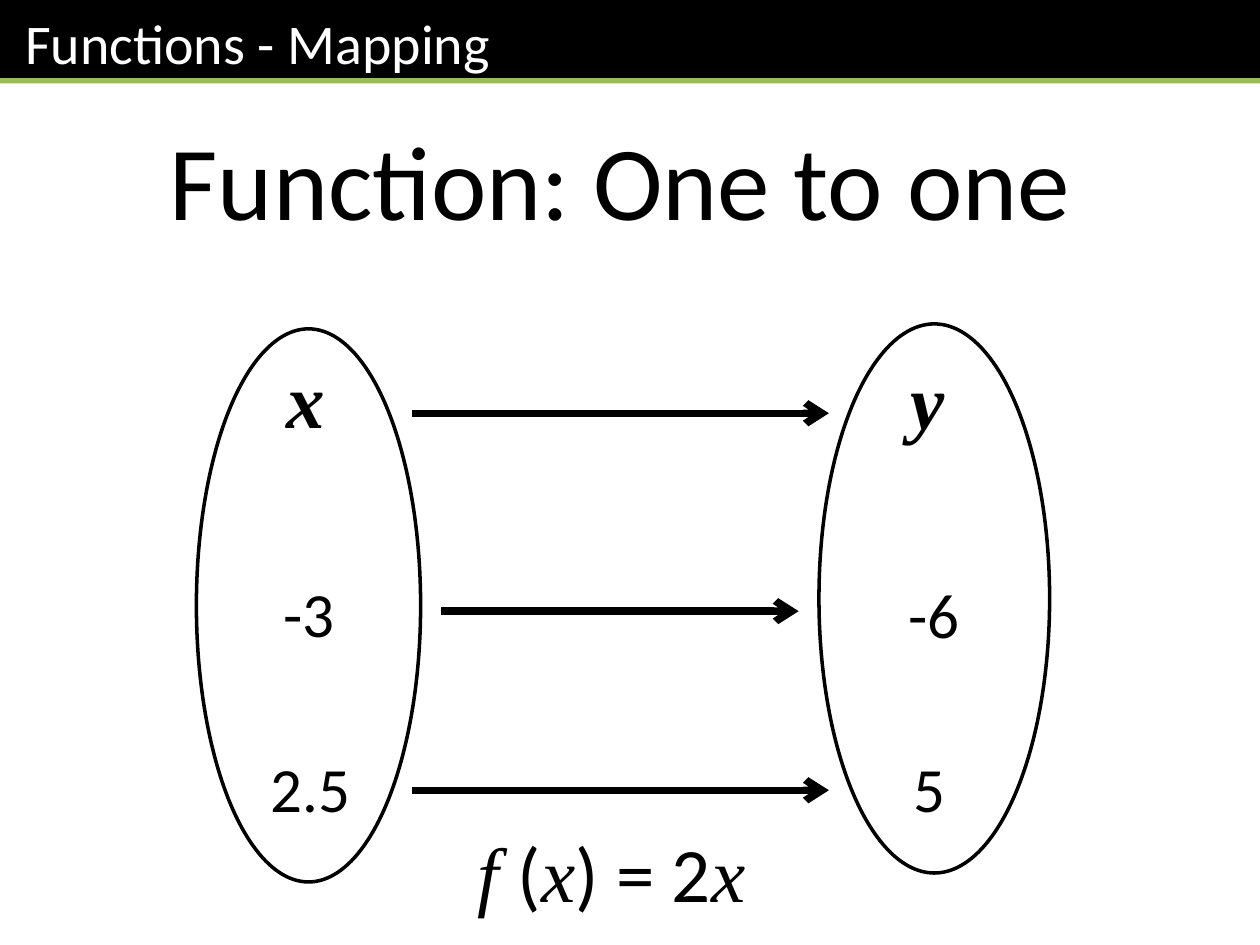
from dataclasses import dataclass

from lxml import etree
from pptx import Presentation
from pptx import util as u
from pptx.dml.color import RGBColor
from pptx.enum import shapes, text
from pptx.oxml import ns


@dataclass(frozen=True)
class Theme:
    black: RGBColor = RGBColor(0x00, 0x00, 0x00)
    white: RGBColor = RGBColor(0xFF, 0xFF, 0xFF)
    green: RGBColor = RGBColor(0x9B, 0xBB, 0x59)
    sans: str = "Calibri"
    serif: str = "Times New Roman"
    header: int = 32
    value: int = 36
    symbol: int = 44
    title: int = 60


theme = Theme()


def write(box, runs, size, color=theme.black, align=text.PP_ALIGN.CENTER):
    """Fill the box with one paragraph; runs are (words, font, bold, italic)."""
    para = box.text_frame.paragraphs[0]
    para.alignment = align
    for words, font, bold, italic in runs:
        span = para.add_run()
        span.text = words
        span.font.name = font
        span.font.size = u.Pt(size)
        span.font.bold = bold
        span.font.italic = italic
        span.font.color.rgb = color


def add_line(left, right, y, color, width):
    line = page.shapes.add_connector(
        shapes.MSO_CONNECTOR.STRAIGHT, u.Cm(left), u.Cm(y), u.Cm(right), u.Cm(y))
    line.line.color.rgb = color
    line.line.width = u.Pt(width)
    etree.SubElement(line._element.spPr, ns.qn("a:effectLst"))
    return line


deck = Presentation()
deck.slide_width, deck.slide_height = u.Cm(25.4), u.Cm(19.05)
page = deck.slides.add_slide(deck.slide_layouts[6])

# Header bar
header = page.shapes.add_shape(
    shapes.MSO_SHAPE.RECTANGLE, 0, 0, deck.slide_width, u.Cm(1.68))
header.shadow.inherit = False
header.fill.solid()
header.fill.fore_color.rgb = theme.black
header.line.fill.background()
write(header, [(" Functions - Mapping", theme.sans, False, False)],
      theme.header, theme.white, text.PP_ALIGN.LEFT)
add_line(0, 25.4, 1.63, theme.green, 3)

# Domain and range ovals
for left, top, width, height in [(3.96, 6.63, 4.52, 11.15), (16.51, 6.53, 4.65, 11.07)]:
    oval = page.shapes.add_shape(
        shapes.MSO_SHAPE.OVAL, u.Cm(left), u.Cm(top), u.Cm(width), u.Cm(height))
    oval.shadow.inherit = False
    oval.fill.solid()
    oval.fill.fore_color.rgb = theme.white
    oval.line.color.rgb = theme.black
    oval.line.width = u.Pt(2)

# Mapping arrows
for left, right, y in [(8.31, 16.71, 8.33), (8.89, 16.1, 12.32), (8.31, 16.71, 15.93)]:
    arrow = add_line(left, right, y, theme.black, 4.25)
    etree.SubElement(arrow.line._get_or_add_ln(), ns.qn("a:tailEnd"), type="arrow")

# Title, set members and formula
formula = [
    ("f ", theme.serif, False, True),
    ("(", theme.sans, False, False),
    ("x", theme.serif, False, True),
    (") = 2", theme.sans, False, False),
    ("x", theme.serif, False, True),
]
labels = [
    (1.4, 2.21, 22.2, 2.82, theme.title, [("Function: One to one", theme.sans, False, False)]),
    (5.36, 6.96, 1.6, 2.13, theme.symbol, [("x", theme.serif, True, True)]),
    (5.23, 11.46, 2.01, 1.8, theme.value, [("-3", theme.sans, False, False)]),
    (5.16, 14.99, 2.21, 1.8, theme.value, [("2.5", theme.sans, False, False)]),
    (17.91, 6.99, 1.6, 2.13, theme.symbol, [("y", theme.serif, True, True)]),
    (18.03, 11.48, 1.6, 1.8, theme.value, [("-6", theme.sans, False, False)]),
    (17.93, 14.99, 1.6, 1.8, theme.value, [("5", theme.sans, False, False)]),
    (9.37, 16.51, 5.99, 2.13, theme.symbol, formula),
]
for left, top, width, height, size, runs in labels:
    box = page.shapes.add_textbox(u.Cm(left), u.Cm(top), u.Cm(width), u.Cm(height))
    align = text.PP_ALIGN.LEFT if runs is formula else text.PP_ALIGN.CENTER
    write(box, runs, size, align=align)

deck.save("out.pptx")
